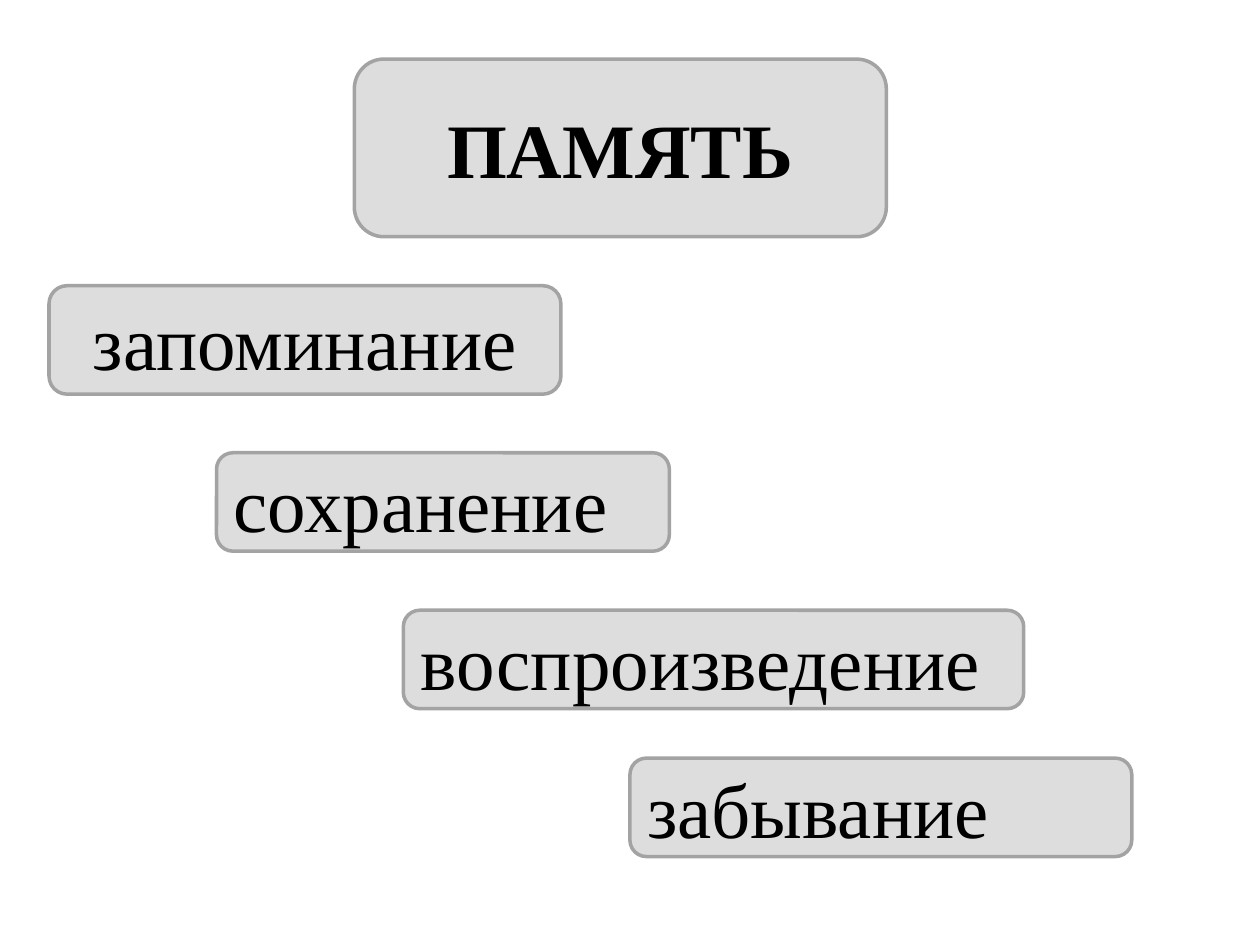
from pptx import Presentation
from pptx.dml.color import RGBColor
from pptx.enum.shapes import MSO_SHAPE
from pptx.enum.text import MSO_ANCHOR, PP_ALIGN
from pptx.util import Pt

FILL = RGBColor(0xDD, 0xDD, 0xDD)
BORDER = RGBColor(0xA3, 0xA3, 0xA3)
BLACK = RGBColor(0, 0, 0)
FONT = "Times New Roman"

TITLE_BOX = (202.5, 33.75, 304, 101.5)
PROCESSES = [
    ("запоминание", (28, 163.25, 292.5, 62), PP_ALIGN.CENTER),
    ("сохранение", (123.75, 258.75, 258.75, 56.25), PP_ALIGN.LEFT),
    ("воспроизведение", (230.5, 348.75, 354.5, 56.25), PP_ALIGN.LEFT),
    ("забывание", (360, 433.25, 286.75, 56.25), PP_ALIGN.LEFT),
]


def add_block(slide, text, box, align, bold=False):
    sp = slide.shapes.add_shape(
        MSO_SHAPE.FLOWCHART_ALTERNATE_PROCESS, *map(Pt, box))
    sp.shadow.inherit = False
    sp.fill.solid()
    sp.fill.fore_color.rgb = FILL
    sp.line.color.rgb = BORDER
    sp.line.width = Pt(2)

    tf = sp.text_frame
    tf.word_wrap = True
    tf.vertical_anchor = MSO_ANCHOR.MIDDLE
    p = tf.paragraphs[0]
    p.alignment = align
    r = p.add_run()
    r.text = text
    r.font.name = FONT
    r.font.size = Pt(44)
    r.font.bold = bold
    r.font.color.rgb = BLACK


def add_memory_slide(prs):
    slide = prs.slides.add_slide(prs.slide_layouts[6])
    add_block(slide, "ПАМЯТЬ", TITLE_BOX, PP_ALIGN.CENTER, bold=True)
    for text, box, align in PROCESSES:
        add_block(slide, text, box, align)


def main():
    prs = Presentation()
    prs.slide_width, prs.slide_height = Pt(720), Pt(540)
    add_memory_slide(prs)
    prs.save("out.pptx")


if __name__ == "__main__":
    main()
